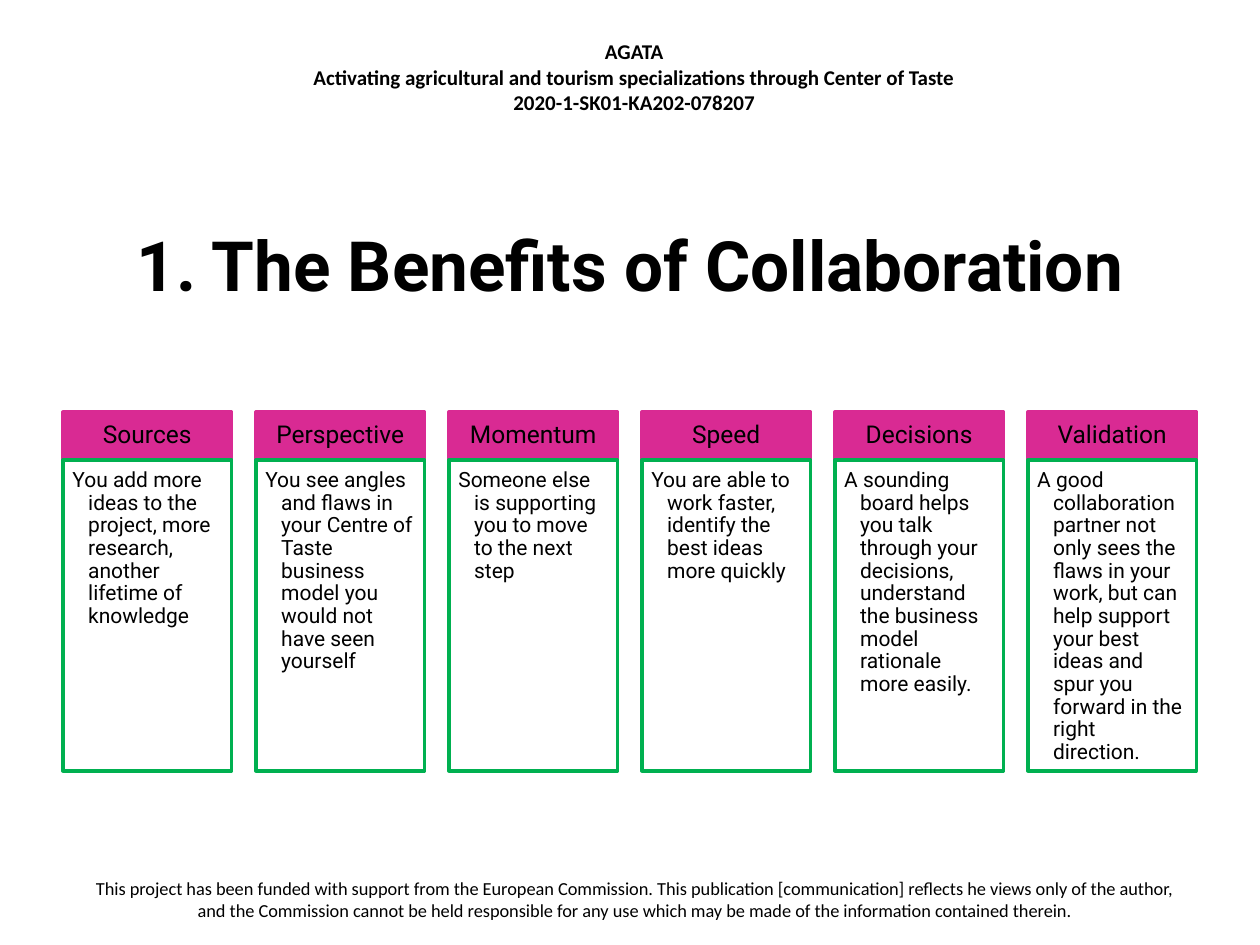
from pptx import Presentation
from pptx.dml.color import RGBColor
from pptx.enum.shapes import MSO_SHAPE
from pptx.enum.text import MSO_ANCHOR, MSO_AUTO_SIZE, PP_ALIGN
from pptx.util import Cm, Pt

BLACK = RGBColor(0x00, 0x00, 0x00)
MAGENTA = RGBColor(0xD9, 0x2A, 0x93)
GREEN = RGBColor(0x00, 0xB0, 0x50)

PROJECT = [
    "AGATA",
    "Activating agricultural and tourism specializations through Center of Taste",
    "2020-1-SK01-KA202-078207",
]
DISCLAIMER = [
    "This project has been funded with support from the European Commission. "
    "This publication [communication] reflects he views only of the author, "
    "and the Commission cannot be held responsible for any use which may be "
    "made of the information contained therein."
]
BENEFITS = [
    ("Sources", "You add more ideas to the project, more research, "
     "another lifetime of knowledge"),
    ("Perspective", "You see angles and flaws in your Centre of Taste "
     "business model you would not have seen yourself"),
    ("Momentum", "Someone else is supporting you to move to the next step"),
    ("Speed", "You are able to work faster, identify the best ideas more quickly"),
    ("Decisions", "A sounding board helps you talk through your decisions, "
     "understand the business model rationale more easily."),
    ("Validation", "A good collaboration partner not only sees the flaws in "
     "your work, but can help support your best ideas and spur you forward "
     "in the right direction."),
]

LEFT, PITCH, WIDTH = 1.27, 3.89, 3.4
HEAD_TOP, HEAD_HEIGHT, BODY_HEIGHT = 8.31, 0.96, 6.27


class SlideBuilder:
    heading_font = "Roboto"
    note_font = "Calibri"

    def __init__(self, prs):
        self.slide = prs.slides.add_slide(prs.slide_layouts[5])

    def format(self, p, font, size, bold=False, align=PP_ALIGN.CENTER):
        p.alignment = align
        for r in p.runs:
            r.font.name = font
            r.font.size = Pt(size)
            r.font.bold = bold
            r.font.color.rgb = BLACK

    def title(self, text, left, top, width, height):
        sp = self.slide.shapes.title
        sp.left, sp.top, sp.width, sp.height = map(Cm, (left, top, width, height))
        tf = sp.text_frame
        tf.text = text
        tf.word_wrap = True
        tf.auto_size = MSO_AUTO_SIZE.NONE
        tf.vertical_anchor = MSO_ANCHOR.MIDDLE
        self.format(tf.paragraphs[0], self.heading_font, 39.6, bold=True)

    def note(self, lines, left, top, width, height, size, bold=False):
        sp = self.slide.shapes.add_textbox(*map(Cm, (left, top, width, height)))
        tf = sp.text_frame
        tf.word_wrap = True
        tf.text = "\n".join(lines)
        for p in tf.paragraphs:
            self.format(p, self.note_font, size, bold)

    def box(self, text, left, top, height, color, insets, anchor):
        sp = self.slide.shapes.add_shape(
            MSO_SHAPE.RECTANGLE, *map(Cm, (left, top, WIDTH, height)))
        sp.shadow.inherit = False
        sp.line.color.rgb = color
        sp.line.width = Pt(2)
        tf = sp.text_frame
        tf.word_wrap = True
        tf.vertical_anchor = anchor
        (tf.margin_left, tf.margin_top,
         tf.margin_right, tf.margin_bottom) = map(Cm, insets)
        tf.text = text
        tf.paragraphs[0].line_spacing = 0.9
        return sp

    def column_head(self, text, left):
        sp = self.box(text, left, HEAD_TOP, HEAD_HEIGHT, MAGENTA,
                      (0.28, 0.16, 0.28, 0.16), MSO_ANCHOR.MIDDLE)
        sp.fill.solid()
        sp.fill.fore_color.rgb = MAGENTA
        self.format(sp.text_frame.paragraphs[0], self.heading_font, 14)

    def column_body(self, text, left):
        sp = self.box(text, left, HEAD_TOP + HEAD_HEIGHT, BODY_HEIGHT, GREEN,
                      (0.19, 0.19, 0.24, 0.26), MSO_ANCHOR.TOP)
        sp.fill.background()
        p = sp.text_frame.paragraphs[0]
        p.level = 1
        pPr = p._p.get_or_add_pPr()
        pPr.set("marL", str(Cm(0.32)))
        pPr.set("indent", str(-Cm(0.32)))
        self.format(p, self.heading_font, 12, align=PP_ALIGN.LEFT)


def main():
    prs = Presentation()
    prs.slide_width, prs.slide_height = Cm(25.4), Cm(19.05)
    s = SlideBuilder(prs)
    s.note(PROJECT, 5.28, 0.66, 15.01, 1.8, 12, bold=True)
    s.note(DISCLAIMER, 1.37, 17.55, 22.86, 1.19, 10.5)
    s.title("1. The Benefits of Collaboration", 1.27, 3.73, 22.86, 3.18)
    for i, (head, body) in enumerate(BENEFITS):
        left = LEFT + i * PITCH
        s.column_head(head, left)
        s.column_body(body, left)
    prs.save("out.pptx")


if __name__ == "__main__":
    main()
